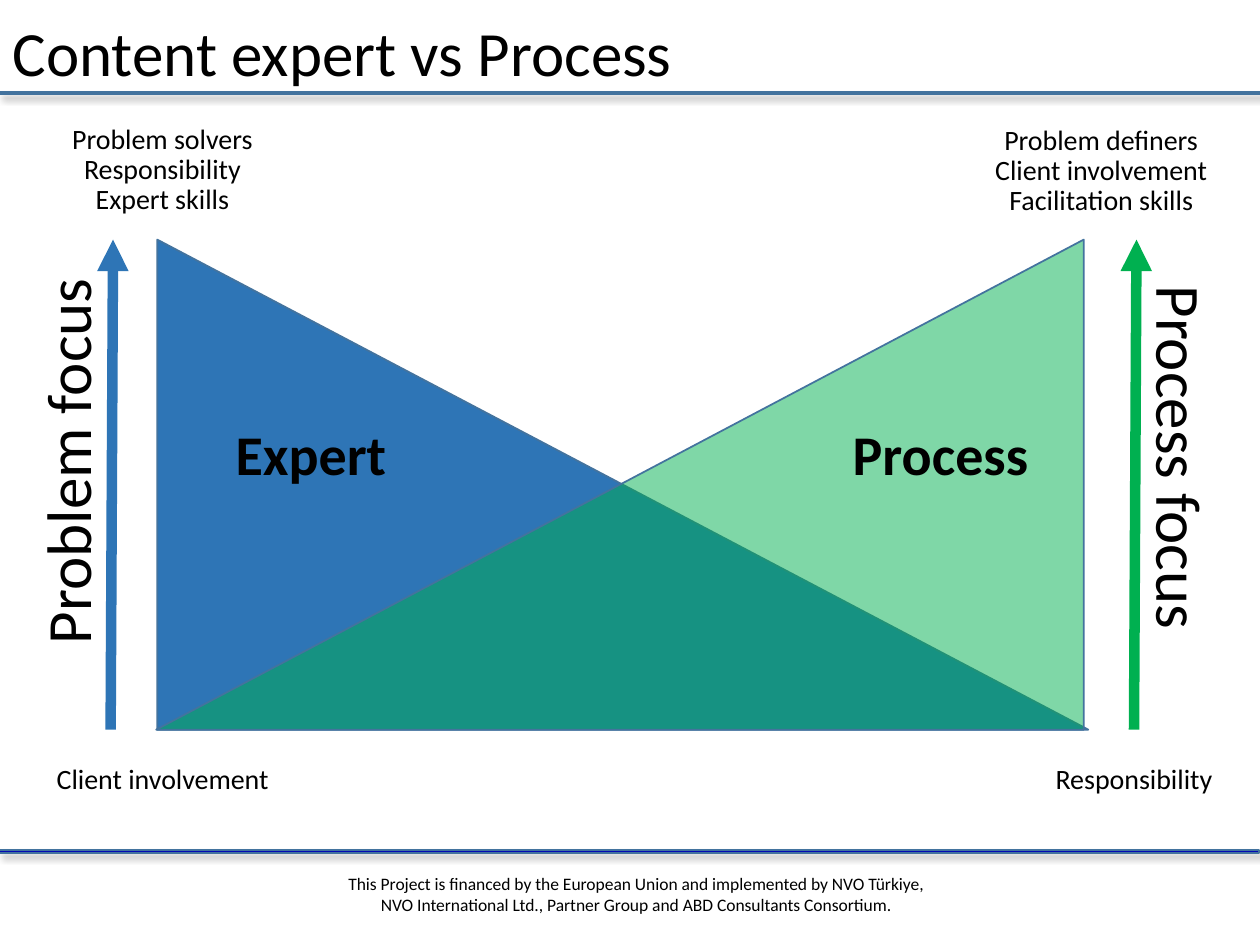
"""Build the slide comparing content experts with process facilitators."""
import pptx
import pptx.util
import pptx.dml.color
import pptx.enum.shapes
import pptx.enum.text
import pptx.oxml
import pptx.oxml.ns
from pptx.util import Cm

SHAPE = pptx.enum.shapes.MSO_SHAPE
ALIGN = pptx.enum.text.PP_ALIGN
ANCHOR = pptx.enum.text.MSO_ANCHOR
FIT = pptx.enum.text.MSO_AUTO_SIZE
NS = pptx.oxml.ns.nsdecls("a")
BLUE, GREEN, OUTLINE, RULE = "2E75B6", "00B050", "43739E", "0408B4"


def rgb(value):
    return pptx.dml.color.RGBColor.from_string(value)


class Slide:
    font = "Calibri"
    ink = "000000"

    def __init__(self, prs):
        self.s = prs.slides.add_slide(prs.slide_layouts[5])

    def set_text(self, sp, lines, size, align=ALIGN.CENTER, anchor=ANCHOR.BOTTOM,
                 spacing=0.9, bold=False, vert=None, fit=FIT.NONE):
        tf = sp.text_frame
        tf.text = "\n".join(lines)
        tf.word_wrap = True
        tf.auto_size = fit
        tf.vertical_anchor = anchor
        if vert:
            sp._element.txBody.bodyPr.set("vert", vert)
        for p in tf.paragraphs:
            p.alignment = align
            p.line_spacing = spacing
            p.font.name = self.font
            p.font.size = pptx.util.Pt(size)
            p.font.bold = bold
            p.font.color.rgb = rgb(self.ink)

    def title(self, text, x, y, w, h):
        sp = self.s.shapes.title
        sp.left, sp.top, sp.width, sp.height = Cm(x), Cm(y), Cm(w), Cm(h)
        self.set_text(sp, [text], 36, align=ALIGN.LEFT)

    def text(self, lines, x, y, w, h, size=16, **style):
        sp = self.s.shapes.add_textbox(Cm(x), Cm(y), Cm(w), Cm(h))
        self.set_text(sp, lines, size, **style)

    def shape(self, kind, x, y, w, h, fill):
        sp = self.s.shapes.add_shape(kind, Cm(x), Cm(y), Cm(w), Cm(h))
        sp.shadow.inherit = False
        sp.fill.solid()
        sp.fill.fore_color.rgb = rgb(fill)
        sp.line.color.rgb = rgb(OUTLINE)
        sp.line.width = pptx.util.Pt(1)
        return sp

    def rule(self, x, y):
        sp = self.shape(SHAPE.RECTANGLE, x, y, 25.4, 0.05, RULE)
        effects = sp._element.spPr.find(pptx.oxml.ns.qn("a:effectLst"))
        effects.append(pptx.oxml.parse_xml(
            f'<a:outerShdw {NS} blurRad="50800" dist="38100" dir="2700000" algn="tl" rotWithShape="0">'
            '<a:srgbClr val="000000"><a:alpha val="40000"/></a:srgbClr></a:outerShdw>'))

    def triangle(self, x, w, fill, flip=False, alpha=None):
        sp = self.shape(SHAPE.RIGHT_TRIANGLE, x, 4.83, w, 9.88, fill)
        if flip:
            sp._element.spPr.xfrm.set("flipH", "1")
        if alpha:
            color = sp._element.spPr.find(".//" + pptx.oxml.ns.qn("a:srgbClr"))
            color.append(pptx.oxml.parse_xml(f'<a:alpha {NS} val="{alpha * 1000}"/>'))

    def arrow(self, x, color):
        c = self.s.shapes.add_connector(pptx.enum.shapes.MSO_CONNECTOR.STRAIGHT,
                                        Cm(x), Cm(14.71), Cm(x + 0.05), Cm(4.83))
        c.line.color.rgb = rgb(color)
        c.line.width = pptx.util.Pt(6)
        spPr = c._element.spPr
        spPr.get_or_add_ln().append(pptx.oxml.parse_xml(f'<a:tailEnd {NS} type="triangle"/>'))
        spPr.append(pptx.oxml.parse_xml(f"<a:effectLst {NS}/>"))


def main():
    prs = pptx.Presentation()
    prs.slide_width, prs.slide_height = Cm(25.4), Cm(19.05)
    s = Slide(prs)

    s.title("Content expert vs Process", 0, 0.05, 25.4, 1.9)
    s.text(["This Project is financed by the European Union and implemented by NVO Türkiye, "
            "NVO International Ltd., Partner Group and ABD Consultants Consortium."],
           6.7, 17.48, 12.24, 1.12, size=10, anchor=ANCHOR.TOP, spacing=1, fit=FIT.SHAPE_TO_FIT_TEXT)
    s.rule(-0.02, 17.14)
    s.rule(0, 1.85)

    s.triangle(3.17, 18.77, BLUE)
    s.triangle(3.15, 18.7, GREEN, flip=True, alpha=50)
    s.arrow(2.23, BLUE)
    s.arrow(22.86, GREEN)

    s.text(["Problem focus"], 0.94, 3.89, 1.3, 10.82, size=36, vert="vert270")
    s.text(["Process focus"], 22.91, 3.81, 1.3, 10.82, size=36, vert="vert")
    s.text(["Problem solvers", "Responsibility", "Expert skills"], 0.94, 3.56, 4.67, 0.91)
    s.text(["Problem definers", "Client involvement", "Facilitation skills"], 19.71, 3.71, 4.98, 0.79)
    s.text(["Responsibility"], 20.37, 15.37, 4.98, 0.79)
    s.text(["Client involvement"], 0.79, 15.37, 4.98, 0.79)
    for name, x, w in (("Expert", 4.5, 3.76), ("Process", 16.94, 4.14)):
        s.text([name], x, 8.33, w, 1.63, size=32, bold=True, align=ALIGN.LEFT,
               anchor=ANCHOR.TOP, spacing=1, fit=FIT.SHAPE_TO_FIT_TEXT)

    prs.save("out.pptx")


if __name__ == "__main__":
    main()
